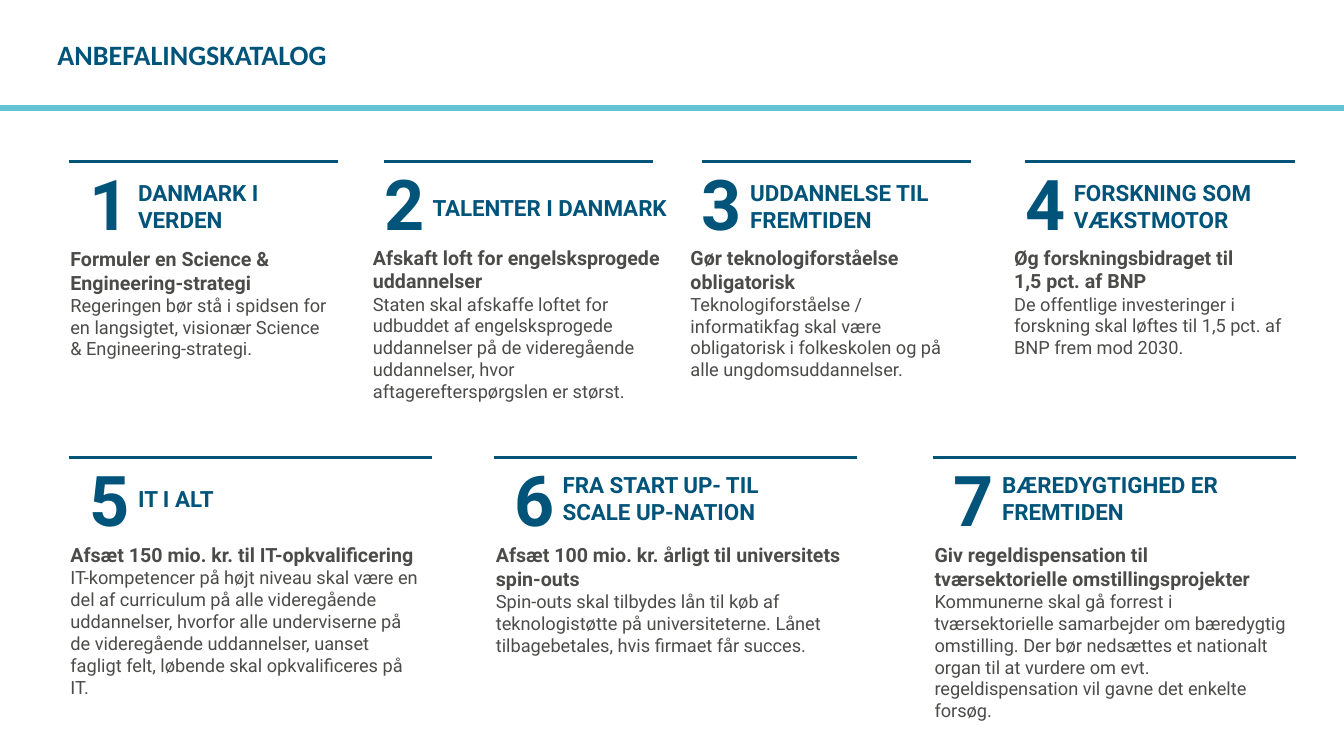
from dataclasses import dataclass
from pptx import Presentation, util as u
from pptx.dml import color
from pptx.enum import shapes, text
from pptx.oxml import parse_xml
from pptx.oxml import ns


@dataclass(frozen=True)
class Theme:
    navy: str = "005379"
    aqua: str = "62C3D4"
    grey: str = "4B4B4A"
    title_font: str = "Calibri"
    font: str = "Roboto"
    title: int = 20
    number: int = 50
    heading: int = 16
    lead: int = 14
    body: int = 13


theme = Theme()
PX = u.Inches(1) // 100
TOP, MIDDLE, BOTTOM = text.MSO_ANCHOR.TOP, text.MSO_ANCHOR.MIDDLE, text.MSO_ANCHOR.BOTTOM

presentation = Presentation()
presentation.slide_width, presentation.slide_height = 1333 * PX, 750 * PX
slide = presentation.slides.add_slide(presentation.slide_layouts[5])


def add_rule(left, top, width, rgb, weight):
    rule = slide.shapes.add_connector(
        shapes.MSO_CONNECTOR.STRAIGHT, left * PX, top * PX, (left + width) * PX, top * PX)
    rule.line.color.rgb = color.RGBColor.from_string(rgb)
    rule.line.width = u.Pt(weight)
    rule._element.spPr.append(parse_xml(f"<a:effectLst {ns.nsdecls('a')}/>"))


def add_text(left, top, width, height, content, sizes, rgb, anchor, inset=True):
    frame = slide.shapes.add_textbox(left * PX, top * PX, width * PX, height * PX).text_frame
    frame.word_wrap = True
    frame.vertical_anchor = anchor
    if not inset:
        frame.margin_left = frame.margin_right = frame.margin_top = frame.margin_bottom = 0
    frame.text = content
    for index, paragraph in enumerate(frame.paragraphs):
        paragraph.font.name = theme.font
        paragraph.font.size = u.Pt(sizes[min(index, len(sizes) - 1)])
        paragraph.font.bold = index == 0 or len(sizes) == 1
        paragraph.font.color.rgb = color.RGBColor.from_string(rgb)
    return frame


add_rule(0, 107, 1333, theme.aqua, 4)

title = slide.shapes.title
title.left, title.top, title.width, title.height = 47 * PX, 36 * PX, 1092 * PX, 65 * PX
title.text_frame.text = "ANBEFALINGSKATALOG"
title.text_frame.vertical_anchor = TOP
title.text_frame.auto_size = text.MSO_AUTO_SIZE.NONE
paragraph = title.text_frame.paragraphs[0]
paragraph.alignment = text.PP_ALIGN.LEFT
paragraph.line_spacing = 0.9
paragraph.font.name = theme.title_font
paragraph.font.size = u.Pt(theme.title)
paragraph.font.bold = True
paragraph.font.color.rgb = color.RGBColor.from_string(theme.navy)

# rows: rule top, rule width, heading anchor, then
# (rule left, number left, body left, body top, body width, body height, heading, lead, body)
rows = [
    (160, 267, BOTTOM, [
        (68, 68, 60, 240, 276, 145, "DANMARK I\vVERDEN",
         "Formuler en Science & Engineering-strategi",
         "Regeringen bør stå i spidsen for en langsigtet, visionær Science & Engineering-strategi."),
        (381, 360, 360, 239, 315, 167, "TALENTER I DANMARK",
         "Afskaft loft for engelsksprogede uddannelser",
         "Staten skal afskaffe loftet for udbuddet af engelsksprogede uddannelser på de "
         "videregående uddannelser, hvor aftagerefterspørgslen er størst."),
        (696, 675, 675, 239, 288, 145, "UDDANNELSE TIL\nFREMTIDEN",
         "Gør teknologiforståelse obligatorisk",
         "Teknologiforståelse / informatikfag skal være obligatorisk i folkeskolen og på alle "
         "ungdomsuddannelser."),
        (1017, 996, 996, 239, 288, 123, "FORSKNING SOM\nVÆKSTMOTOR",
         "Øg forskningsbidraget til\v1,5 pct. af BNP",
         "De offentlige investeringer i forskning skal løftes til 1,5 pct. af BNP frem mod 2030."),
    ]),
    (454, 360, MIDDLE, [
        (68, 68, 60, 534, 368, 165, "IT I ALT",
         "Afsæt 150 mio. kr. til IT-opkvalificering",
         "IT-kompetencer på højt niveau skal være en del af curriculum på alle videregående "
         "uddannelser, hvorfor alle underviserne på de videregående uddannelser, uanset fagligt "
         "felt, løbende skal opkvalificeres på IT."),
        (490, 489, 482, 534, 386, 123, "FRA START UP- TIL\nSCALE UP-NATION",
         "Afsæt 100 mio. kr. årligt til universitets spin-outs",
         "Spin-outs skal tilbydes lån til køb af teknologistøtte på universiteterne. Lånet "
         "tilbagebetales, hvis firmaet får succes."),
        (925, 925, 917, 534, 368, 188, "BÆREDYGTIGHED ER\nFREMTIDEN",
         "Giv regeldispensation til tværsektorielle omstillingsprojekter",
         "Kommunerne skal gå forrest i tværsektorielle samarbejder om bæredygtig omstilling. "
         "Der bør nedsættes et nationalt organ til at vurdere om evt. regeldispensation vil "
         "gavne det enkelte forsøg."),
    ]),
]

number = 0
for rule_top, rule_width, anchor, cards in rows:
    for rule_left, number_left, left, top, width, height, heading, lead, body in cards:
        number += 1
        add_rule(rule_left, rule_top, rule_width, theme.navy, 2)
        frame = add_text(number_left, rule_top + 10, 61, 61, str(number),
                         [theme.number], theme.navy, MIDDLE, inset=False)
        frame.paragraphs[0].alignment = text.PP_ALIGN.RIGHT
        heading_top = rule_top - 2 if number == 2 else rule_top + 10
        add_text(number_left + 69, heading_top, 240, 61, heading,
                 [theme.heading], theme.navy, anchor, inset=False)
        frame = add_text(left, top, width, height, f"{lead}\n{body}",
                         [theme.lead, theme.body], theme.grey, TOP)
        frame.auto_size = text.MSO_AUTO_SIZE.SHAPE_TO_FIT_TEXT

presentation.save("out.pptx")
